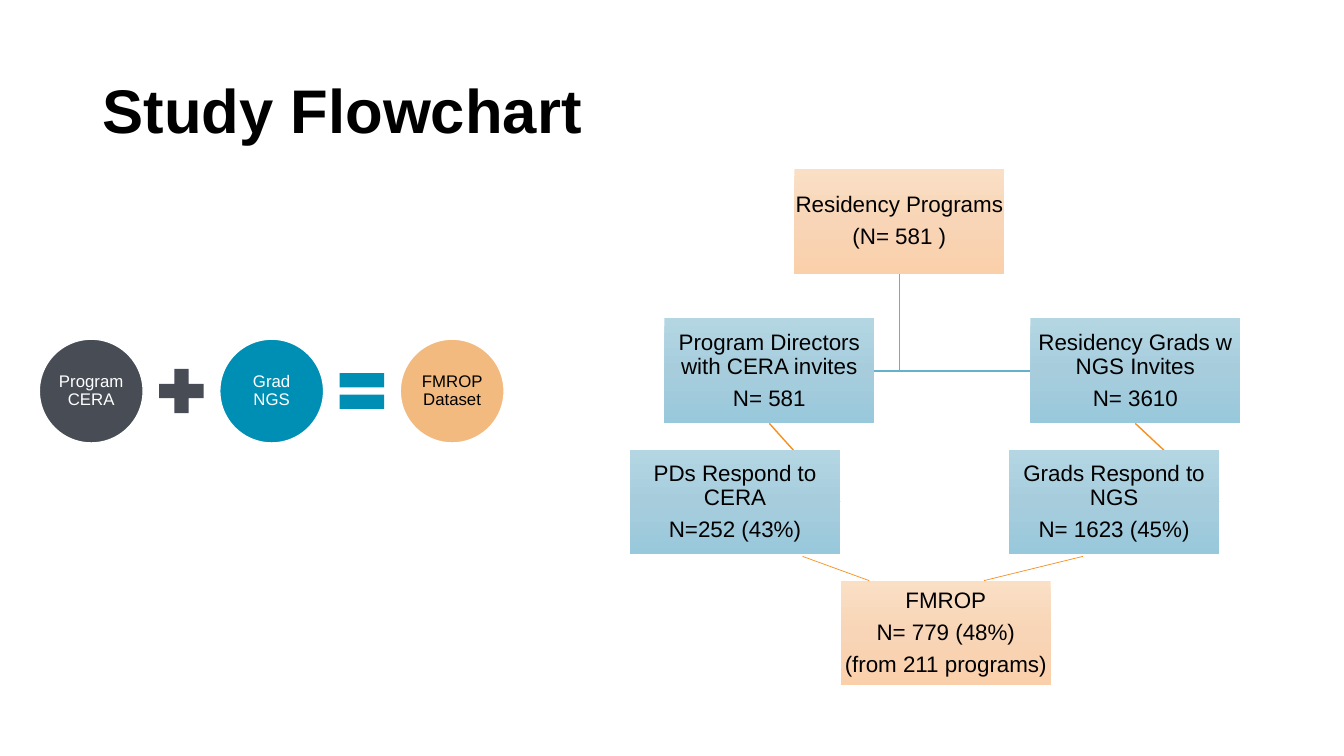
from pptx import Presentation
from pptx.dml.color import RGBColor
from pptx.enum.shapes import MSO_CONNECTOR, MSO_SHAPE as Preset
from pptx.enum.text import MSO_ANCHOR as Anchor, PP_ALIGN as Align
from pptx.oxml.ns import qn
from pptx.util import Inches, Pt
from lxml.etree import SubElement

ORANGE, BLUE = "F7901E", "65B0CA"
SLATE, TEAL, SAND = "474C55", "008FB4", "F2BA7F"
PEACH_STOPS = ("FADFC5", "F8D5B6", "FAD0AA")
SKY_STOPS = ("B4D6E3", "A7CDDD", "98C8DC")

# Equation row: circles and signs share one gap and one centre line
CIRCLE, SIGN, GAP = 1.03, 0.6, 0.08
EQUATION_LEFT, EQUATION_MIDDLE = 0.39, 3.88

# Flowchart grid
BOX_WIDTH, BOX_HEIGHT = 2.08, 1.04
ROW_STEP = 1.3
ROWS = [1.68] + [3.16 + ROW_STEP * step for step in range(3)]
TOP, BOTTOM, RIGHT, LEFT = 0, 2, 3, 1

EQUATION = [
    (Preset.OVAL, SLATE, "Program CERA", "FFFFFF"),
    (Preset.MATH_PLUS, SLATE, None, None),
    (Preset.OVAL, TEAL, "Grad NGS", "FFFFFF"),
    (Preset.MATH_EQUAL, TEAL, None, None),
    (Preset.OVAL, SAND, "FMROP Dataset", "000000"),
]
# name: (column left, row, gradient, lines)
BOXES = {
    "programs": (7.88, 0, PEACH_STOPS, ["Residency Programs", "(N= 581 )"]),
    "directors": (6.59, 1, SKY_STOPS,
                  ["Program Directors with CERA invites", "N= 581"]),
    "grads": (10.22, 1, SKY_STOPS,
              ["Residency Grads w NGS Invites", "N= 3610"]),
    "director replies": (6.25, 2, SKY_STOPS,
                         ["PDs Respond to CERA", "N=252 (43%)"]),
    "grad replies": (10.01, 2, SKY_STOPS,
                     ["Grads Respond to NGS", "N= 1623 (45%)"]),
    "dataset": (8.34, 3, PEACH_STOPS,
                ["FMROP", "N= 779 (48%)", "(from 211 programs)"]),
}


def color(hex_text):
    return RGBColor.from_string(hex_text)


def apply(target, values):
    for name, value in values.items():
        setattr(target, name, value)


def style_font(font, size, hex_text, bold=False):
    apply(font, {"name": "Arial", "size": Pt(size), "bold": bold})
    font.color.rgb = color(hex_text)


def add_plain_shape(page, preset, left, top, width, height):
    """Add a preset shape with neither shadow nor outline."""
    shape = page.shapes.add_shape(
        preset, Inches(left), Inches(top), Inches(width), Inches(height))
    shape.shadow.inherit = False
    shape.line.fill.background()
    return shape


def write_lines(shape, lines, size, hex_text, inset):
    frame = shape.text_frame
    margins = ("margin_left", "margin_top", "margin_right", "margin_bottom")
    apply(frame, dict.fromkeys(margins, Inches(inset)))
    apply(frame, {"word_wrap": True, "vertical_anchor": Anchor.MIDDLE})
    for index, line in enumerate(lines):
        para = frame.add_paragraph() if index else frame.paragraphs[0]
        apply(para, {"alignment": Align.CENTER, "line_spacing": 0.9,
                     "space_after": Pt(0.35 * size)})
        span = para.add_run()
        span.text = line
        style_font(span.font, size, hex_text)


def fill_gradient(shape, stops):
    """Fill downwards with evenly spaced colour stops."""
    shape.fill.gradient()
    shape.fill.gradient_angle = 270
    stop_list = shape.element.spPr.find(qn("a:gradFill")).find(qn("a:gsLst"))
    for old_stop in list(stop_list):
        stop_list.remove(old_stop)
    for index, hex_text in enumerate(stops):
        position = 100000 * index // (len(stops) - 1)
        stop = SubElement(stop_list, qn("a:gs"), pos=str(position))
        SubElement(stop, qn("a:srgbClr"), val=hex_text)


def add_title(page, text):
    title = page.shapes.title
    apply(title, {"left": Inches(0.92), "top": Inches(0.4),
                  "width": Inches(11.5), "height": Inches(1.45)})
    title.text_frame.text = text
    title.text_frame.vertical_anchor = Anchor.MIDDLE
    para = title.text_frame.paragraphs[0]
    apply(para, {"alignment": Align.LEFT, "line_spacing": 0.9})
    style_font(para.runs[0].font, 44, "000000", bold=True)


def add_equation(page):
    left = EQUATION_LEFT
    for preset, fill, label, text_color in EQUATION:
        side = CIRCLE if label else SIGN
        shape = add_plain_shape(
            page, preset, left, EQUATION_MIDDLE - side / 2, side, side)
        shape.fill.solid()
        shape.fill.fore_color.rgb = color(fill)
        if label:
            shape.line.color.rgb = color("FFFFFF")
            shape.line.width = Pt(1)
            write_lines(shape, [label], 12, text_color, 0.02)
        left += side + GAP


def add_box(page, left, row, stops, lines):
    box = add_plain_shape(
        page, Preset.RECTANGLE, left, ROWS[row], BOX_WIDTH, BOX_HEIGHT)
    fill_gradient(box, stops)
    write_lines(box, lines, 16, "000000", 0.01)
    return box


def add_line(page, start, end, hex_text, width):
    """Draw a line behind the boxes between two points in inches."""
    line = page.shapes.add_connector(
        MSO_CONNECTOR.STRAIGHT, *map(Inches, start + end))
    line.line.color.rgb = color(hex_text)
    line.line.width = Pt(width)
    SubElement(line.element.spPr, qn("a:effectLst"))
    page.shapes.element.insert(2, line.element)
    return line


def join(page, first, first_side, second, second_side, hex_text):
    line = add_line(page, (0, 0), (0, 0), hex_text, 1)
    line.begin_connect(first, first_side)
    line.end_connect(second, second_side)


def add_flowchart(page):
    boxes = {name: add_box(page, *values) for name, values in BOXES.items()}
    for source, replies in (("directors", "director replies"),
                            ("grads", "grad replies")):
        join(page, boxes[source], BOTTOM, boxes[replies], RIGHT, ORANGE)
    join(page, boxes["directors"], RIGHT, boxes["grads"], LEFT, BLUE)

    trunk_x = BOXES["programs"][0] + BOX_WIDTH / 2
    trunk = add_line(page, (trunk_x, ROWS[0] + BOX_HEIGHT),
                     (trunk_x, ROWS[1] + BOX_HEIGHT / 2), BLUE, 1)
    trunk.begin_connect(boxes["programs"], BOTTOM)

    for start_x, end_x in ((7.96, 8.62), (10.74, 9.76)):
        add_line(page, (start_x, 5.52), (end_x, ROWS[3]), ORANGE, 0.5)


def main():
    deck = Presentation()
    apply(deck, {"slide_width": Inches(13.33), "slide_height": Inches(7.5)})
    page = deck.slides.add_slide(deck.slide_layouts[5])
    add_title(page, "Study Flowchart")
    add_equation(page)
    add_flowchart(page)
    deck.save("out.pptx")


if __name__ == "__main__":
    main()
